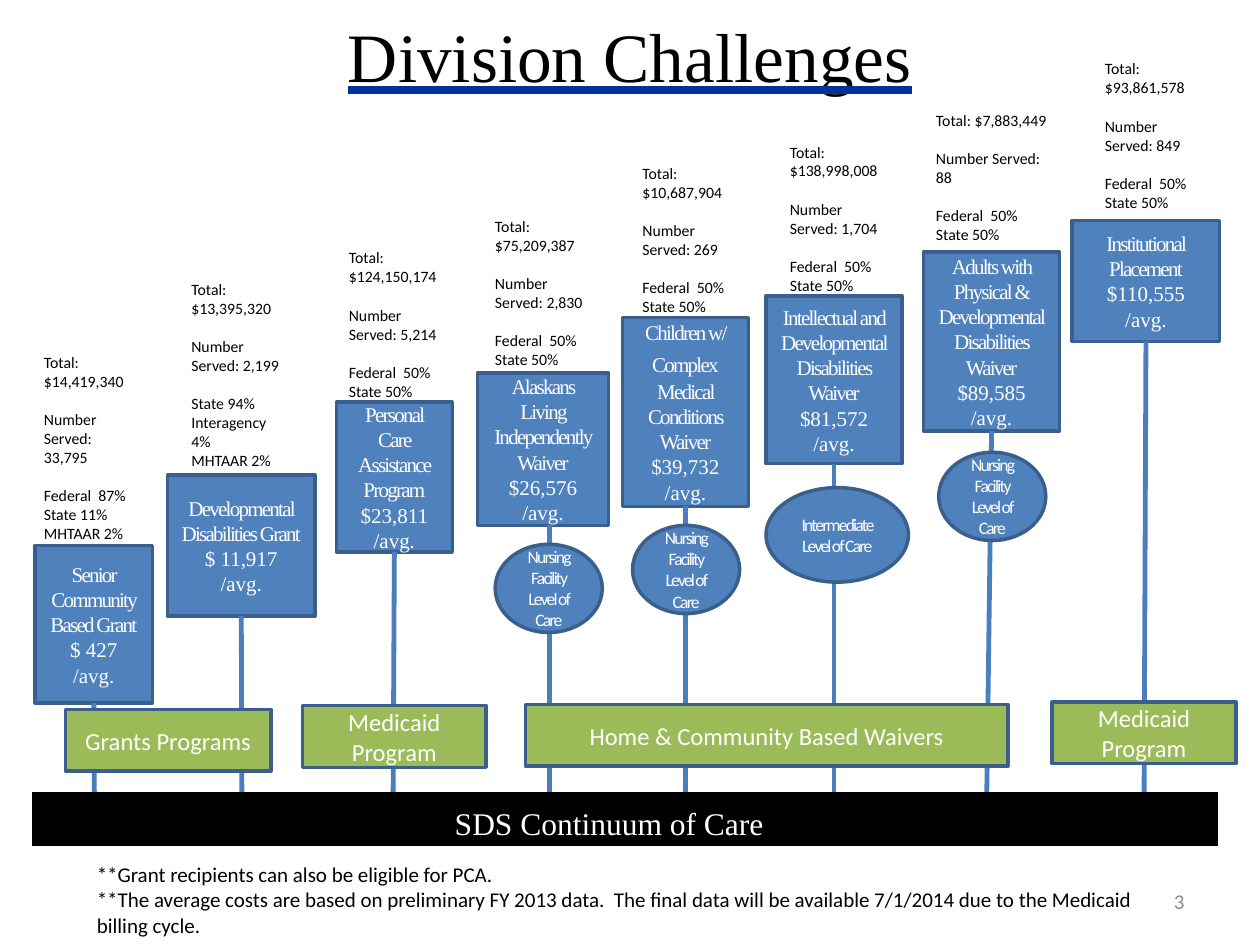
from lxml import etree
from pptx import Presentation, util as u
from pptx.dml import color
from pptx.enum import shapes, text
from pptx.oxml import ns

SERIF, SANS = "Times New Roman", "Calibri"
BLUE, GREEN, EDGE, STEM = "4F81BD", "9BBB59", "3A5F8C", "4B7EBC"
WHITE, BLACK, GRAY, NAVY = "FFFFFF", "000000", "8C8C8C", "003399"
LEFT, CENTER, RIGHT = text.PP_ALIGN.LEFT, text.PP_ALIGN.CENTER, text.PP_ALIGN.RIGHT
RECT, OVAL = shapes.MSO_SHAPE.RECTANGLE, shapes.MSO_SHAPE.OVAL
HALVES = ["Federal  50%", "State 50%"]
NURSING = "Nursing Facility Level of Care"

PROGRAMS = [
    (["Senior Community Based Grant"], "$ 427", (0.28, 4.33, 0.93, 1.25), (0.75, 6.5)),
    (["Developmental Disabilities Grant"], "$ 11,917", (1.33, 3.77, 1.17, 1.12), (1.92, 6.31)),
    (["Personal Care Assistance Program"], "$23,811", (2.67, 3.19, 0.92, 1.19), (3.12, 6.36)),
    (["Alaskans Living Independently Waiver"], "$26,576", (3.79, 2.96, 1.04, 1.21), (4.36, 6.33)),
    (["Children w/ Complex", " ", "Medical Conditions Waiver"], "$39,732",
     (4.94, 2.52, 1, 1.5), (5.44, 6.37)),
    (["Intellectual and Developmental Disabilities Waiver"], "$81,572",
     (6.08, 2.35, 1.08, 1.33), (6.62, 6.35)),
    (["Adults with Physical & Developmental Disabilities Waiver"], "$89,585",
     (7.33, 2, 1.08, 1.42), (7.83, 6.42)),
    (["Institutional Placement"], "$110,555", (8.51, 1.75, 1.17, 0.96), (9.08, 6.33)),
]
GROUPS = [
    ("Home & Community Based Waivers", (4.17, 5.59, 3.83, 0.49)),
    ("Grants Programs", (0.52, 5.63, 1.63, 0.49)),
    ("Medicaid Program", (2.4, 5.6, 1.46, 0.49)),
    ("Medicaid Program", (8.35, 5.57, 1.46, 0.49)),
]
CARE_LEVELS = [
    (NURSING, (3.93, 4.32, 0.85, 0.7)),
    ("Intermediate Level of Care", (6.08, 3.87, 1.13, 0.75)),
    (NURSING, (5.02, 4.17, 0.85, 0.7)),
    (NURSING, (7.45, 3.59, 0.85, 0.7)),
]
STATISTICS = [
    ("$14,419,340", "33,795", ["Federal  87%", "State 11%", "MHTAAR 2%"], (0.25, 2.75, 0.92, 1.92)),
    ("$13,395,320", "2,199", ["State 94%", "Interagency 4%", "MHTAAR 2%"], (1.42, 2.17, 0.92, 1.92)),
    ("$124,150,174", "5,214", HALVES, (2.67, 1.92, 0.92, 1.62)),
    ("$75,209,387", "2,830", HALVES, (3.83, 1.67, 0.92, 1.62)),
    ("$10,687,904", "269", HALVES, (5, 1.25, 0.92, 1.62)),
    ("$138,998,008", "1,704", HALVES, (6.17, 1.08, 0.92, 1.62)),
    ("$7,883,449", "88", HALVES, (7.33, 0.83, 1.08, 1.46)),
    ("$93,861,578", "849", HALVES, (8.67, 0.42, 0.92, 1.62)),
]


def paint(target, value):
    if hasattr(target, "solid"):
        target.solid()
        target = target.fore_color
    target.rgb = color.RGBColor.from_string(value)


class Painter:
    def __init__(self, slide):
        self.slide = slide

    def span(self, para, words, size, font, ink, spacing=0):
        span = para.add_run()
        span.text = words
        span.font.size = u.Pt(size)
        span.font.name = font
        paint(span.font.fill, ink)
        if spacing:
            span.font._element.set("spc", str(spacing * 100))
        return span

    def para(self, frame, align, gap=0):
        first = frame.paragraphs[0]
        para = frame.add_paragraph() if first.runs else first
        para.alignment = align
        if gap:
            para.space_before = u.Pt(gap)
        return para

    def block(self, kind, place, fill):
        box = self.slide.shapes.add_shape(kind, *map(u.Inches, place))
        box.shadow.inherit = False
        paint(box.fill, fill)
        paint(box.line.fill, EDGE)
        box.line.width = u.Pt(2)
        box.text_frame.word_wrap = True
        box.text_frame.vertical_anchor = text.MSO_ANCHOR.MIDDLE
        return box

    def label(self, kind, place, fill, words, size, spacing=0):
        box = self.block(kind, place, fill)
        self.span(self.para(box.text_frame, CENTER), words, size, SANS, WHITE, spacing)

    def program(self, names, cost, place):
        box = self.block(RECT, place, BLUE)
        para = self.para(box.text_frame, CENTER)
        for name in names:
            self.span(para, name, 12 if name.strip() else 16, SERIF, WHITE, -1)
        for words in (cost, "/avg."):
            self.span(self.para(box.text_frame, CENTER), words, 12, SERIF, WHITE)
        return box

    def note(self, place, lines, size, font=SANS, ink=BLACK, align=LEFT, middle=False, gaps=()):
        box = self.slide.shapes.add_textbox(*map(u.Inches, place))
        frame = box.text_frame
        frame.word_wrap = True
        if middle:
            frame.vertical_anchor = text.MSO_ANCHOR.MIDDLE
        else:
            frame.auto_size = text.MSO_AUTO_SIZE.SHAPE_TO_FIT_TEXT
        for index, words in enumerate(lines):
            para = self.para(frame, align, 11 if index in gaps else 0)
            self.span(para, words, size, font, ink)
        return box

    def title(self, place, words):
        box = self.note(place, [words], 39.6, SERIF, align=CENTER, middle=True)
        font = box.text_frame.paragraphs[0].runs[0].font
        font.underline = text.MSO_UNDERLINE.HEAVY_LINE
        underline = etree.Element(ns.qn("a:uFill"))
        solid = etree.SubElement(underline, ns.qn("a:solidFill"))
        etree.SubElement(solid, ns.qn("a:srgbClr")).set("val", NAVY)
        font._element.find(ns.qn("a:solidFill")).addnext(underline)

    def line(self, start, end, ink, width):
        line = self.slide.shapes.add_connector(
            shapes.MSO_CONNECTOR.STRAIGHT, *map(u.Inches, (*start, *end)))
        paint(line.line.fill, ink)
        line.line.width = u.Pt(width)
        etree.SubElement(line._element.spPr, ns.qn("a:effectLst"))
        return line


def main():
    deck = Presentation()
    deck.slide_width, deck.slide_height = u.Inches(10), u.Inches(7.5)
    page = Painter(deck.slides.add_slide(deck.slide_layouts[6]))

    page.title((0.5, 0.17, 9, 0.53), "Division Challenges")
    for names, cost, place, foot in PROGRAMS:
        left, top, width, height = place
        box = page.program(names, cost, place)
        centered = abs(left + width / 2 - foot[0]) < 0.02 or foot[0] > 7
        head = left + width / 2 if centered else foot[0]
        stem = page.line(foot, (head, top + height), STEM, 2.75)
        if centered:
            stem.end_connect(box, 2)

    page.line((0.25, 6.5), (9.67, 6.5), BLACK, 30.75)
    page.note((0.75, 6.33, 8.17, 0.4), ["SDS Continuum of Care"], 18, SERIF, WHITE, CENTER)
    page.note((0.67, 6.79, 8.67, 0.71), [
        "**Grant recipients can also be eligible for PCA.",
        "**The average costs are based on preliminary FY 2013 data.  The final data "
        "will be available 7/1/2014 due to the Medicaid billing cycle.",
    ], 12)

    for words, place in GROUPS:
        page.label(RECT, place, GREEN, words, 14)
    for words, place in CARE_LEVELS:
        page.label(OVAL, place, BLUE, words, 10, -1)
    page.note((7.17, 6.95, 2.33, 0.4), ["3"], 12, ink=GRAY, align=RIGHT, middle=True)
    for total, served, shares, place in STATISTICS:
        lines = [f"Total: {total}", f"Number Served: {served}", *shares]
        page.note(place, lines, 9, gaps=(1, 2))
    deck.save("out.pptx")


if __name__ == "__main__":
    main()
